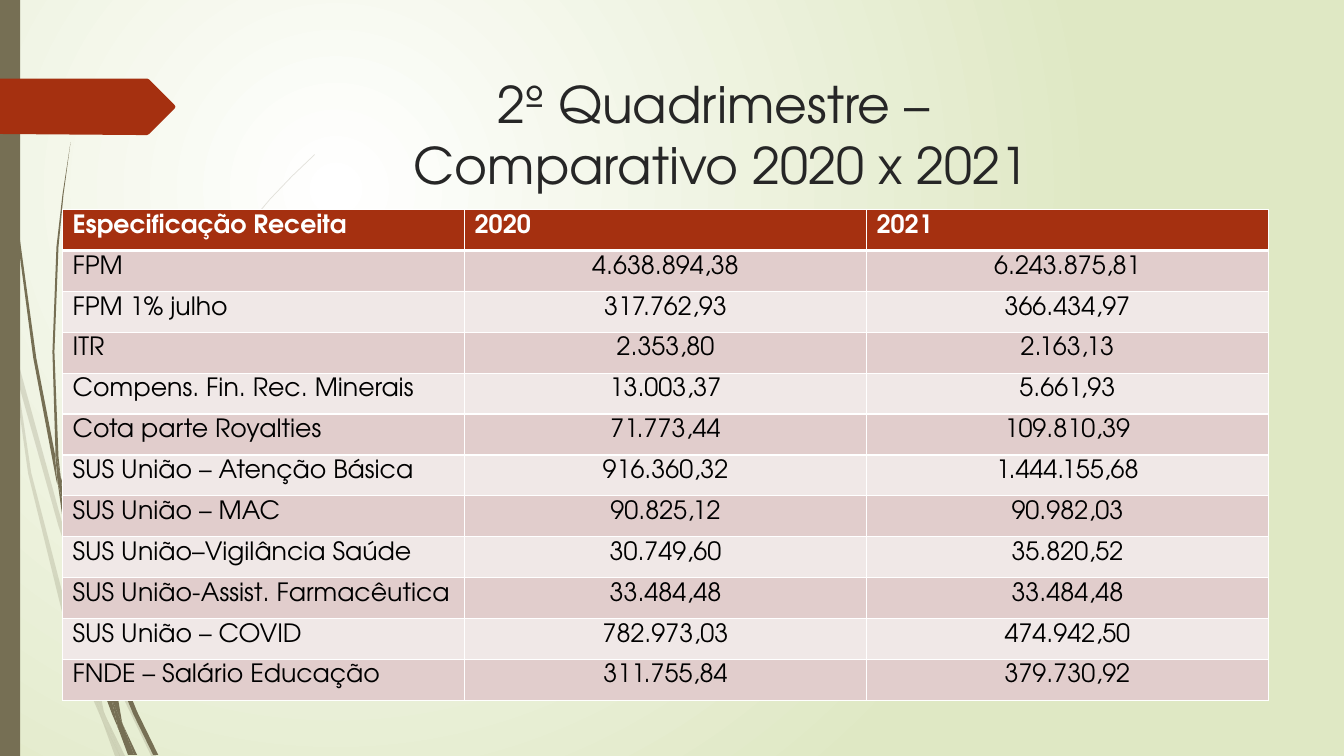
from dataclasses import dataclass

from lxml.etree import SubElement
from pptx import Presentation
from pptx.dml.color import RGBColor
from pptx.enum.shapes import MSO_SHAPE as Preset
from pptx.enum.text import MSO_ANCHOR as Anchor, PP_ALIGN as Align
from pptx.oxml.ns import qn
from pptx.util import Inches, Pt

FONT = "TeX Gyre Adventor"
RUST, OLIVE, WHITE = "A53010", "766F54", "FFFFFF"
BANDS = ["E1CDCC", "F0E8E7"]

Points = list[tuple[float, float]]


@dataclass
class Plant:
    """A set of grass blades sharing one opacity, in percent."""
    opacity: int
    blades: list[Points]


@dataclass
class Revenue:
    name: str
    first_year: str
    second_year: str


PALE_PLANT = Plant(20, [
    [(0.11, 3.5), (0.09, 3.22), (0, 2.82), (0, 2.99), (0.1, 3.44)],
    [(0.58, 5.22), (0.84, 5.99), (0.85, 5.86), (0.62, 5.2), (0.14, 3.45), (0.17, 3.76)],
    [(0.92, 6.07), (0.88, 5.96), (0.88, 6.1), (1.23, 6.94), (1.5, 7.5), (1.55, 7.5),
     (1.27, 6.92)],
    [(1.19, 7.5), (1.24, 7.5), (1.05, 7.11)],
    [(0.93, 6.83), (0.7, 6.19), (0.31, 4.69), (0.17, 3.76), (0.11, 3.5), (0.28, 4.7),
     (0.65, 6.21), (0.92, 6.93), (1.01, 7.14), (0.99, 7.07)],
    [(0.84, 5.99), (0.87, 6.46), (0.93, 6.83), (0.96, 6.92), (1.05, 7.11), (1.03, 7.06),
     (0.91, 6.46), (0.88, 6.1), (0.88, 6.08)],
    [(0.88, 5.84), (1.1, 4.62), (1.6, 3.49), (2.29, 2.45), (2.68, 1.98), (2.9, 1.75),
     (3.12, 1.54), (3.12, 1.53), (2.89, 1.75), (2.68, 1.97), (2.28, 2.44), (1.58, 3.48),
     (1.07, 4.61), (0.85, 5.84), (0.85, 5.86), (0.88, 5.96)],
    [(1.01, 7.14), (1.14, 7.5), (1.19, 7.5)],
    [(0.88, 6.08), (0.88, 6.1), (0.88, 5.96), (0.85, 5.86), (0.84, 5.99)],
    [(0.96, 6.92), (0.93, 6.83), (0.99, 7.07), (1.01, 7.14), (1.19, 7.5), (1.05, 7.11)],
])

DARK_PLANT = Plant(100, [
    [(0.07, 1.1), (0.17, 2.33), (0.33, 3.55), (0.56, 4.77), (0.57, 4.81), (0.55, 4.57),
     (0.55, 4.53), (0.36, 3.55), (0.19, 2.32), (0.08, 1.09), (0.05, 0.48), (0.04, 0),
     (0.03, 0), (0.04, 0.48)],
    [(0.88, 5.92), (1.06, 6.45), (1.06, 6.33), (1.06, 6.31), (0.93, 5.9), (0.6, 4.72),
     (0.64, 5.05)],
    [(1.13, 6.49), (1.1, 6.41), (1.11, 6.56), (1.32, 7.08), (1.52, 7.49), (1.57, 7.49),
     (1.36, 7.06)],
    [(1.1, 6.91), (0.98, 6.57), (0.72, 5.56), (0.64, 5.05), (0.57, 4.77), (0.68, 5.57),
     (0.93, 6.59), (1.11, 7.08), (1.17, 7.22), (1.16, 7.17)],
    [(0.6, 4.72), (0.58, 4.53), (0.54, 3.49), (0.58, 2.45), (0.63, 1.93), (0.7, 1.41),
     (0.62, 1.93), (0.56, 2.45), (0.52, 3.49), (0.55, 4.49)],
    [(1.33, 7.49), (1.36, 7.49), (1.22, 7.19)],
    [(0.57, 4.77), (0.64, 5.05), (0.6, 4.72), (0.55, 4.49), (0.55, 4.53)],
    [(1.11, 6.33), (1.25, 5.52), (1.58, 4.76), (2.05, 4.06), (2.31, 3.74), (2.45, 3.59),
     (2.61, 3.44), (2.6, 3.44), (2.45, 3.58), (2.31, 3.73), (2.04, 4.05), (1.56, 4.74),
     (1.22, 5.51), (1.06, 6.31), (1.1, 6.41)],
    [(1.17, 7.22), (1.27, 7.49), (1.31, 7.49)],
    [(1.06, 6.45), (1.1, 6.91), (1.16, 7.06), (1.22, 7.19), (1.21, 7.16), (1.11, 6.56),
     (1.09, 6.51)],
    [(1.06, 6.45), (1.09, 6.51), (1.11, 6.56), (1.1, 6.41), (1.06, 6.31), (1.06, 6.33)],
    [(1.16, 7.06), (1.1, 6.91), (1.16, 7.17), (1.17, 7.22), (1.3, 7.49), (1.33, 7.49),
     (1.22, 7.19)],
])

ARROW: Points = [(1.73, 1.08), (1.48, 1.33), (1.46, 1.34), (1.36, 1.34), (0, 1.33),
                 (0, 0.78), (1.46, 0.78), (1.48, 0.79), (1.73, 1.04), (1.74, 1.06)]

HEADER = Revenue("Especificação Receita", "2020", "2021")
REVENUES = [
    Revenue("FPM", "4.638.894,38", "6.243.875,81"),
    Revenue("FPM 1% julho", "317.762,93", "366.434,97"),
    Revenue("ITR", "2.353,80", "2.163,13"),
    Revenue("Compens. Fin. Rec. Minerais", "13.003,37", "5.661,93"),
    Revenue("Cota parte Royalties", "71.773,44", "109.810,39"),
    Revenue("SUS União – Atenção Básica", "916.360,32", "1.444.155,68"),
    Revenue("SUS União – MAC", "90.825,12", "90.982,03"),
    Revenue("SUS União–Vigilância Saúde", "30.749,60", "35.820,52"),
    Revenue("SUS União-Assist. Farmacêutica", "33.484,48", "33.484,48"),
    Revenue("SUS União – COVID", "782.973,03", "474.942,50"),
    Revenue("FNDE – Salário Educação", "311.755,84", "379.730,92"),
]


def color(value: str) -> RGBColor:
    return RGBColor.from_string(value)


def paint(shape, fill: str, opacity: int = 100) -> None:
    shape.shadow.inherit = False
    shape.line.fill.background()
    shape.fill.solid()
    shape.fill.fore_color.rgb = color(fill)
    if opacity < 100:
        tone = shape.fill._xPr.find(f"{qn('a:solidFill')}/{qn('a:srgbClr')}")
        SubElement(tone, qn("a:alpha"), val=str(opacity * 1000))


def draw_outline(page, points: Points, fill: str, opacity: int = 100) -> None:
    start, *rest = [(Inches(x), Inches(y)) for x, y in points]
    builder = page.shapes.build_freeform(*start)
    builder.add_line_segments(rest, close=True)
    paint(builder.convert_to_shape(), fill, opacity)


def write(frame, text: str, size: int, tint: str, align: Align, bold: bool = False) -> None:
    frame.text = text
    para = frame.paragraphs[0]
    para.alignment = align
    para.font.name, para.font.size, para.font.bold = FONT, Pt(size), bold
    para.font.color.rgb = color(tint)


def draw_background(page) -> None:
    fill = page.background.fill
    fill.gradient()
    for stop, tint, position in zip(fill.gradient_stops, [WHITE, "DFE8C4"], [0, 1]):
        stop.color.rgb, stop.position = color(tint), position
    gradient = page._element.find(f".//{qn('a:gradFill')}")
    gradient.remove(gradient.find(qn("a:lin")))
    circle = SubElement(gradient, qn("a:path"), path="circle")
    SubElement(circle, qn("a:fillToRect"), l="50000", t="50000", r="100000", b="100000")


def set_borders(cell, top: int, bottom: int) -> None:
    properties = cell._tc.get_or_add_tcPr()
    for side, width in [("L", 1), ("R", 1), ("T", top), ("B", bottom)]:
        line = SubElement(properties, qn(f"a:ln{side}"), w=str(Pt(width)))
        SubElement(SubElement(line, qn("a:solidFill")), qn("a:srgbClr"), val=WHITE)


def draw_table(page) -> None:
    entries = [HEADER, *REVENUES]
    table = page.shapes.add_table(len(entries), 3, Inches(0.62), Inches(2.08),
                                  Inches(11.96), Inches(4.87)).table
    for row, entry in enumerate(entries):
        header = row == 0
        for column, text in enumerate([entry.name, entry.first_year, entry.second_year]):
            cell = table.cell(row, column)
            cell.margin_left = cell.margin_right = Inches(0.1)
            cell.margin_top = cell.margin_bottom = Inches(0.05)
            set_borders(cell, top=3 if row == 1 else 1, bottom=3 if header else 1)
            cell.fill.solid()
            cell.fill.fore_color.rgb = color(RUST if header else BANDS[(row - 1) % 2])
            align = Align.LEFT if header or column == 0 else Align.CENTER
            write(cell.text_frame, text, 18, WHITE if header else "000000", align, header)


def main() -> None:
    deck = Presentation()
    deck.slide_width, deck.slide_height = Inches(13.33), Inches(7.5)
    page = deck.slides.add_slide(deck.slide_layouts[6])

    # Backdrop: gradient, grass, side bar and arrow
    draw_background(page)
    for plant in [PALE_PLANT, DARK_PLANT]:
        for blade in plant.blades:
            draw_outline(page, blade, OLIVE, plant.opacity)
    bar = page.shapes.add_shape(Preset.RECTANGLE, 0, 0, Inches(0.2), Inches(7.5))
    paint(bar, OLIVE)
    draw_outline(page, ARROW, RUST)

    # Title
    box = page.shapes.add_textbox(Inches(1.72), Inches(0.68), Inches(10.86), Inches(1.4))
    box.text_frame.word_wrap = True
    box.text_frame.vertical_anchor = Anchor.TOP
    write(box.text_frame, "2º Quadrimestre – \vComparativo 2020 x 2021", 36, "262626",
          Align.CENTER)

    # Revenue comparison
    draw_table(page)
    deck.save("out.pptx")


if __name__ == "__main__":
    main()
